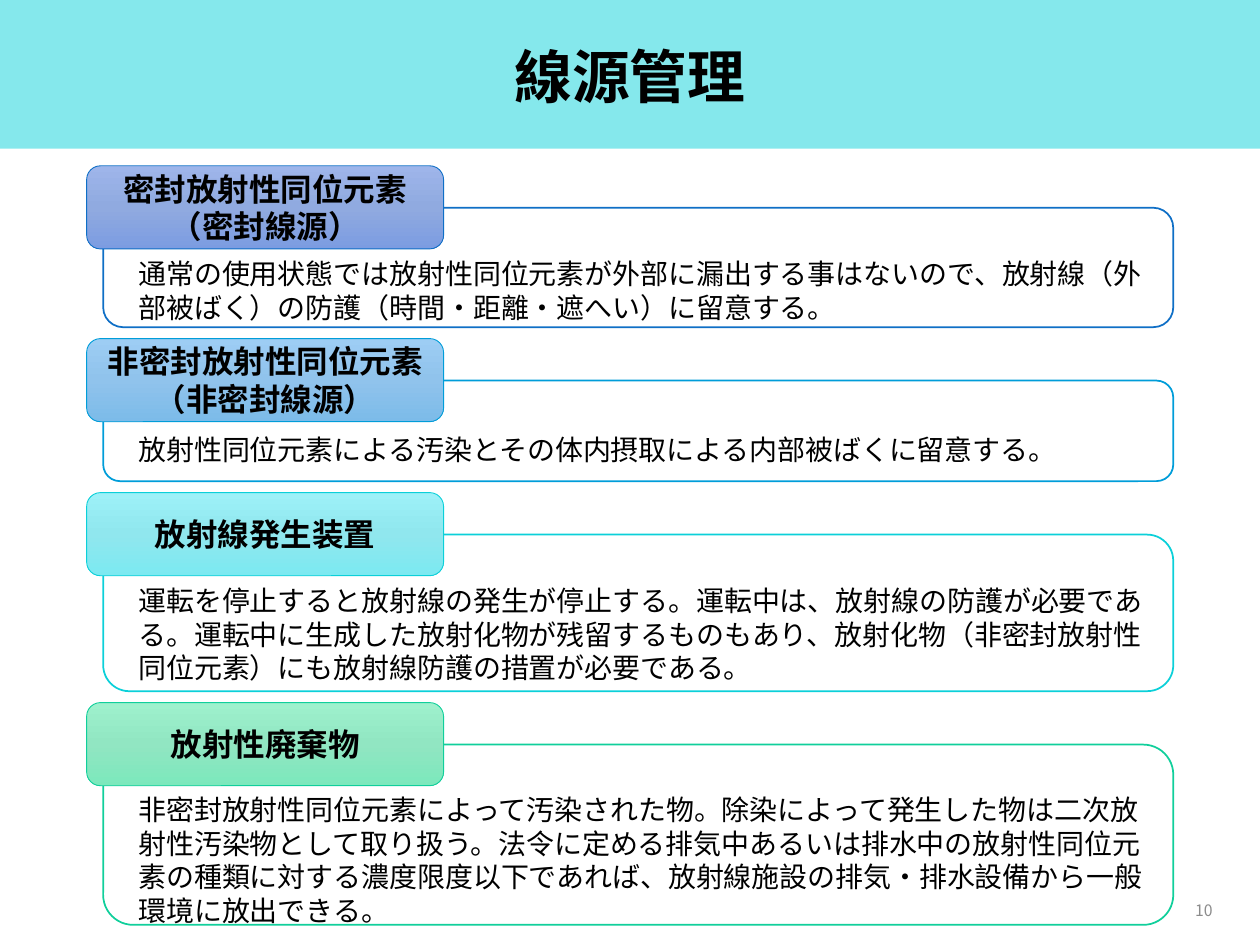
from copy import deepcopy

from lxml import etree
from pptx import Presentation
from pptx.dml.color import RGBColor
from pptx.enum.shapes import MSO_SHAPE
from pptx.enum.text import MSO_ANCHOR, PP_ALIGN
from pptx.oxml.ns import qn
from pptx.util import Pt

RECTANGLE, ROUNDED = MSO_SHAPE.RECTANGLE, MSO_SHAPE.ROUNDED_RECTANGLE
TOP, MIDDLE = MSO_ANCHOR.TOP, MSO_ANCHOR.MIDDLE
LEFT, CENTER, RIGHT = PP_ALIGN.LEFT, PP_ALIGN.CENTER, PP_ALIGN.RIGHT

BLACK = RGBColor(0x00, 0x00, 0x00)
WHITE = RGBColor(0xFF, 0xFF, 0xFF)
GRAY = RGBColor(0x8C, 0x8C, 0x8C)
BANNER = RGBColor(0x85, 0xE8, 0xEC)
BLUE = RGBColor(0x0F, 0x6F, 0xC6)
SKY = RGBColor(0x00, 0x9D, 0xD9)
CYAN = RGBColor(0x0B, 0xD0, 0xD9)
GREEN = RGBColor(0x10, 0xCF, 0x9B)
BLUE_SHADES = RGBColor(0x9E, 0xB5, 0xEA), RGBColor(0x90, 0xAA, 0xE0), RGBColor(0x7C, 0x9C, 0xE1)
SKY_SHADES = RGBColor(0x9D, 0xCD, 0xF4), RGBColor(0x90, 0xC3, 0xEC), RGBColor(0x7C, 0xBB, 0xE9)
CYAN_SHADES = RGBColor(0x9D, 0xF1, 0xF8), RGBColor(0x90, 0xE7, 0xEE), RGBColor(0x7C, 0xE9, 0xF1)
GREEN_SHADES = RGBColor(0x9E, 0xF1, 0xCD), RGBColor(0x91, 0xE6, 0xC2), RGBColor(0x7C, 0xE8, 0xBC)

FIRST_TOP, SECTION_GAP = 94.75, 6.5
TAB_HEIGHT, FRAME_OFFSET = 47.5, 24

SECTIONS = [
    ("密封放射性同位元素\n（密封線源）",
     "通常の使用状態では放射性同位元素が外部に漏出する事はないので、放射線（外部被ばく）の防護"
     "（時間・距離・遮へい）に留意する。",
     68.25, 48.5, 46, BLUE, BLUE_SHADES),
    ("非密封放射性同位元素\n（非密封線源）",
     "放射性同位元素による汚染とその体内摂取による内部被ばくに留意する。",
     57.5, 50, 26.5, SKY, SKY_SHADES),
    ("放射線発生装置",
     "運転を停止すると放射線の発生が停止する。運転中は、放射線の防護が必要である。運転中に生成した"
     "放射化物が残留するものもあり、放射化物（非密封放射性同位元素）にも放射線防護の措置が必要である。",
     89.5, 48.5, 65.5, CYAN, CYAN_SHADES),
    ("放射性廃棄物",
     "非密封放射性同位元素によって汚染された物。除染によって発生した物は二次放射性汚染物として"
     "取り扱う。法令に定める排気中あるいは排水中の放射性同位元素の種類に対する濃度限度以下であれば、"
     "放射線施設の排気・排水設備から一般環境に放出できる。",
     103, 48, 85, GREEN, GREEN_SHADES),
]


class SlideBuilder:
    """Draws styled elements on one slide, with lengths in points."""

    font_name = "Noto Sans CJK JP"

    def __init__(self, slide):
        self.slide = slide

    def set_text(self, shape, text, size, color=BLACK, bold=False, align=LEFT, anchor=TOP, spacing=1.0):
        frame = shape.text_frame
        frame.text = text
        frame.word_wrap = True
        frame.vertical_anchor = anchor
        font_format = {"name": self.font_name, "size": Pt(size), "bold": bold}
        for paragraph in frame.paragraphs:
            paragraph.alignment = align
            paragraph.line_spacing = spacing
            for run in paragraph.runs:
                for attribute, value in font_format.items():
                    setattr(run.font, attribute, value)
                run.font.color.rgb = color
                properties = run._r.get_or_add_rPr()
                etree.SubElement(properties, qn("a:ea"), typeface=self.font_name)

    def text(self, box, text, size, **style):
        shape = self.slide.shapes.add_textbox(*map(Pt, box))
        self.set_text(shape, text, size, **style)

    def panel(self, kind, box, fill, line=None, width=1):
        shape = self.slide.shapes.add_shape(kind, *map(Pt, box))
        shape.shadow.inherit = False
        shape.fill.solid()
        shape.fill.fore_color.rgb = fill
        if line is None:
            shape.line.fill.background()
        else:
            shape.line.color.rgb = line
            shape.line.width = Pt(width)
        return shape

    def tab(self, box, text, line, shades):
        shape = self.panel(ROUNDED, box, shades[0], line, 0.5)
        shape.fill.gradient()
        shape.fill.gradient_angle = 270
        stops = shape._element.spPr.find(f".//{qn('a:gsLst')}")
        stops.insert(1, deepcopy(stops[0]))
        for stop, position, shade in zip(shape.fill.gradient_stops, (0, 0.5, 1), shades):
            stop.position = position
            stop.color.rgb = shade
        self.set_text(shape, text, 18, bold=True, align=CENTER, anchor=MIDDLE)


def main():
    presentation = Presentation()
    presentation.slide_width, presentation.slide_height = Pt(720), Pt(540)
    builder = SlideBuilder(presentation.slides.add_slide(presentation.slide_layouts[6]))

    builder.panel(RECTANGLE, (0, 0, 720, 85), BANNER)
    builder.text((49.5, 15, 621, 61), "線源管理", 33, bold=True, align=CENTER, anchor=MIDDLE, spacing=0.9)

    top = FIRST_TOP
    for heading, body, frame_height, body_offset, body_height, color, shades in SECTIONS:
        builder.panel(ROUNDED, (59, top + FRAME_OFFSET, 611.5, frame_height), WHITE, color)
        builder.text((72, top + body_offset, 599, body_height), body, 16)
        builder.tab((49.5, top, 204, TAB_HEIGHT), heading, color, shades)
        top += FRAME_OFFSET + frame_height + SECTION_GAP

    builder.text((538, 505.5, 162, 29), "10", 9, color=GRAY, align=RIGHT, anchor=MIDDLE)
    presentation.save("out.pptx")


if __name__ == "__main__":
    main()
